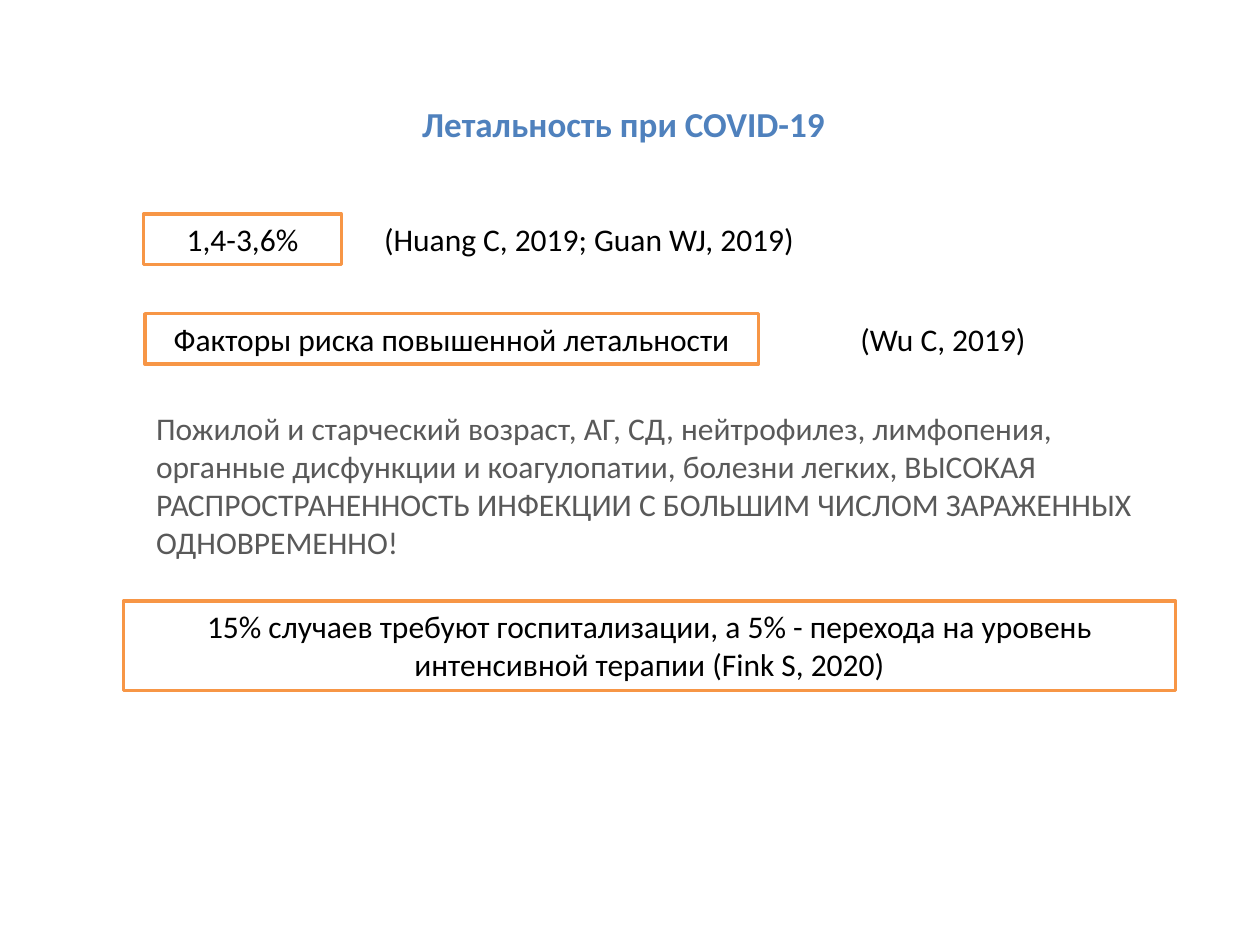
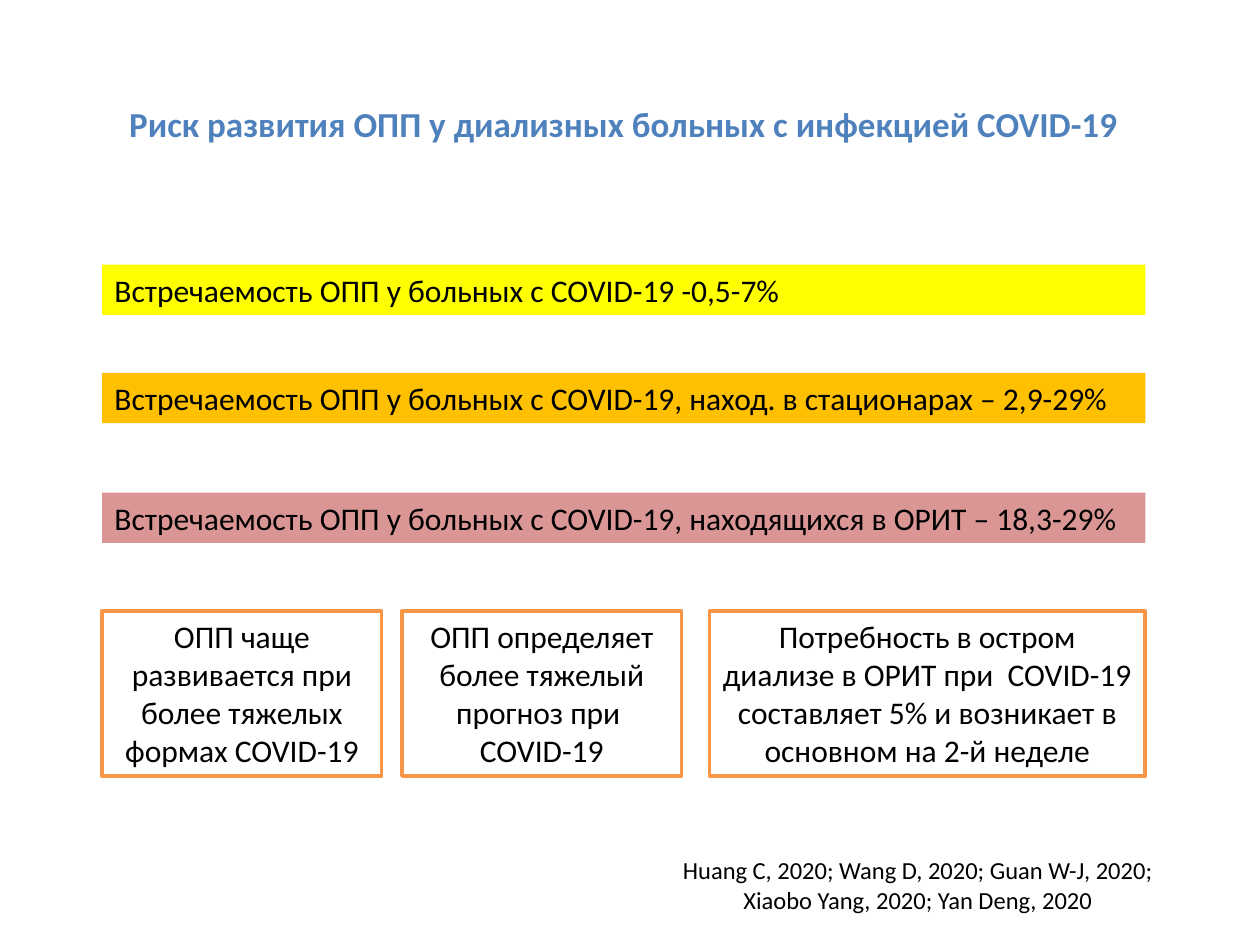
from dataclasses import dataclass
from typing import Any, Optional

import pptx
import pptx.dml.color
import pptx.enum.shapes
import pptx.enum.text
import pptx.util

Inches = pptx.util.Inches
Align = pptx.enum.text.PP_ALIGN


@dataclass(frozen=True)
class Theme:
    font: str = "Calibri"
    head: str = "4F81BD"
    ink: str = "000000"
    gray: str = "595959"
    paper: str = "FFFFFF"
    frame: str = "F79646"
    low: str = "FFFF00"
    mid: str = "FFC000"
    high: str = "D99694"
    title: float = 20
    body: float = 18
    cite: float = 14
    edge: float = 2


THEME = Theme()

# Shared column and row heights, in inches
LEFT, WIDE = 0.81, 8.28
ROW = 0.4


@dataclass(frozen=True)
class Box:
    text: str
    left: float
    top: float
    width: float
    height: float = ROW
    fill: Optional[str] = None
    line: Optional[str] = None
    color: str = THEME.ink
    size: float = THEME.body
    align: Any = Align.LEFT


def tint(code: str) -> pptx.dml.color.RGBColor:
    return pptx.dml.color.RGBColor.from_string(code)


def write(shape: Any, text: str, *, size: float = THEME.body,
          color: str = THEME.ink, bold: bool = False,
          align: Any = Align.LEFT) -> None:
    frame = shape.text_frame
    frame.text = text
    frame.word_wrap = True
    frame.auto_size = pptx.enum.text.MSO_AUTO_SIZE.NONE
    frame.vertical_anchor = pptx.enum.text.MSO_ANCHOR.TOP
    para = frame.paragraphs[0]
    para.alignment = align
    font = para.runs[0].font
    font.name, font.size, font.bold = THEME.font, pptx.util.Pt(size), bold
    font.color.rgb = tint(color)


def draw(slide: Any, box: Box) -> None:
    place = [Inches(n) for n in (box.left, box.top, box.width, box.height)]
    if box.fill:
        kind = pptx.enum.shapes.MSO_SHAPE.RECTANGLE
        shape = slide.shapes.add_shape(kind, *place)
        shape.shadow.inherit = False
        shape.fill.solid()
        shape.fill.fore_color.rgb = tint(box.fill)
        if box.line:
            shape.line.color.rgb = tint(box.line)
            shape.line.width = pptx.util.Pt(THEME.edge)
        else:
            shape.line.fill.background()
    else:
        shape = slide.shapes.add_textbox(*place)
    write(shape, box.text, size=box.size, color=box.color, align=box.align)


def framed(text: str, left: float, top: float, width: float,
           height: float = ROW) -> Box:
    return Box(text, left, top, width, height, fill=THEME.paper,
               line=THEME.frame, align=Align.CENTER)


def build(deck: Any, title: str, boxes: list[Box]) -> None:
    slide = deck.slides.add_slide(deck.slide_layouts[5])
    head = slide.shapes.title
    head.left, head.top = Inches(LEFT), Inches(0.76)
    head.width, head.height = Inches(WIDE), Inches(0.44)
    write(head, title, size=THEME.title, color=THEME.head, bold=True,
          align=Align.CENTER)
    for box in boxes:
        draw(slide, box)


# Slide 1: mortality figures, risk factors and care needs
DEATHS = [
    framed("1,4-3,6%", 1.14, 1.7, 1.57),
    Box("(Huang C, 2019; Guan WJ, 2019)", 2.95, 1.7, 3.7),
    framed("Факторы риска повышенной летальности", 1.15, 2.49, 4.87),
    Box("(Wu C, 2019)", 6.73, 2.49, 2.05),
    Box("Пожилой и старческий возраст, АГ, СД, нейтрофилез, лимфопения, "
        "органные дисфункции и коагулопатии, болезни легких, ВЫСОКАЯ "
        "РАСПРОСТРАНЕННОСТЬ ИНФЕКЦИИ С БОЛЬШИМ ЧИСЛОМ ЗАРАЖЕННЫХ "
        "ОДНОВРЕМЕННО!", 1.14, 3.2, 7.95, 1.31, color=THEME.gray),
    framed("15% случаев требуют госпитализации, а 5% - перехода на уровень "
           "интенсивной терапии (Fink S, 2020)", 0.98, 4.77, 8.35, 0.71),
]

# Slide 2: rate bars, then a row of findings and the sources
STEM = "Встречаемость ОПП у больных с COVID-19"
RATES = [
    (" -0,5-7%", 2.1, THEME.low),
    (", наход. в стационарах – 2,9-29%", 2.96, THEME.mid),
    (", находящихся в ОРИТ – 18,3-29%", 3.91, THEME.high),
]
FACTS = [
    ("ОПП чаще развивается при более тяжелых формах COVID-19", LEFT, 2.22),
    ("ОПП определяет более тяжелый прогноз при  COVID-19", 3.19, 2.22),
    ("Потребность в остром диализе в ОРИТ при  COVID-19 составляет 5% "
     "и возникает в основном на 2-й неделе", 5.63, 3.46),
]
KIDNEY = [
    *(Box(STEM + tail, LEFT, top, WIDE, fill=fill)
      for tail, top, fill in RATES),
    *(framed(text, left, 4.85, width, 1.31) for text, left, width in FACTS),
    Box("Huang C, 2020; Wang D, 2020; Guan W-J, 2020; Xiaobo Yang, 2020; "
        "Yan Deng, 2020", 5.16, 6.74, 4.25, 0.7, size=THEME.cite,
        align=Align.CENTER),
]


def main() -> None:
    deck = pptx.Presentation()
    deck.slide_width, deck.slide_height = Inches(10), Inches(7.5)
    build(deck, "Летальность при COVID-19", DEATHS)
    build(deck, "Риск развития ОПП у диализных больных с инфекцией COVID-19",
          KIDNEY)
    deck.save("out.pptx")


if __name__ == "__main__":
    main()
